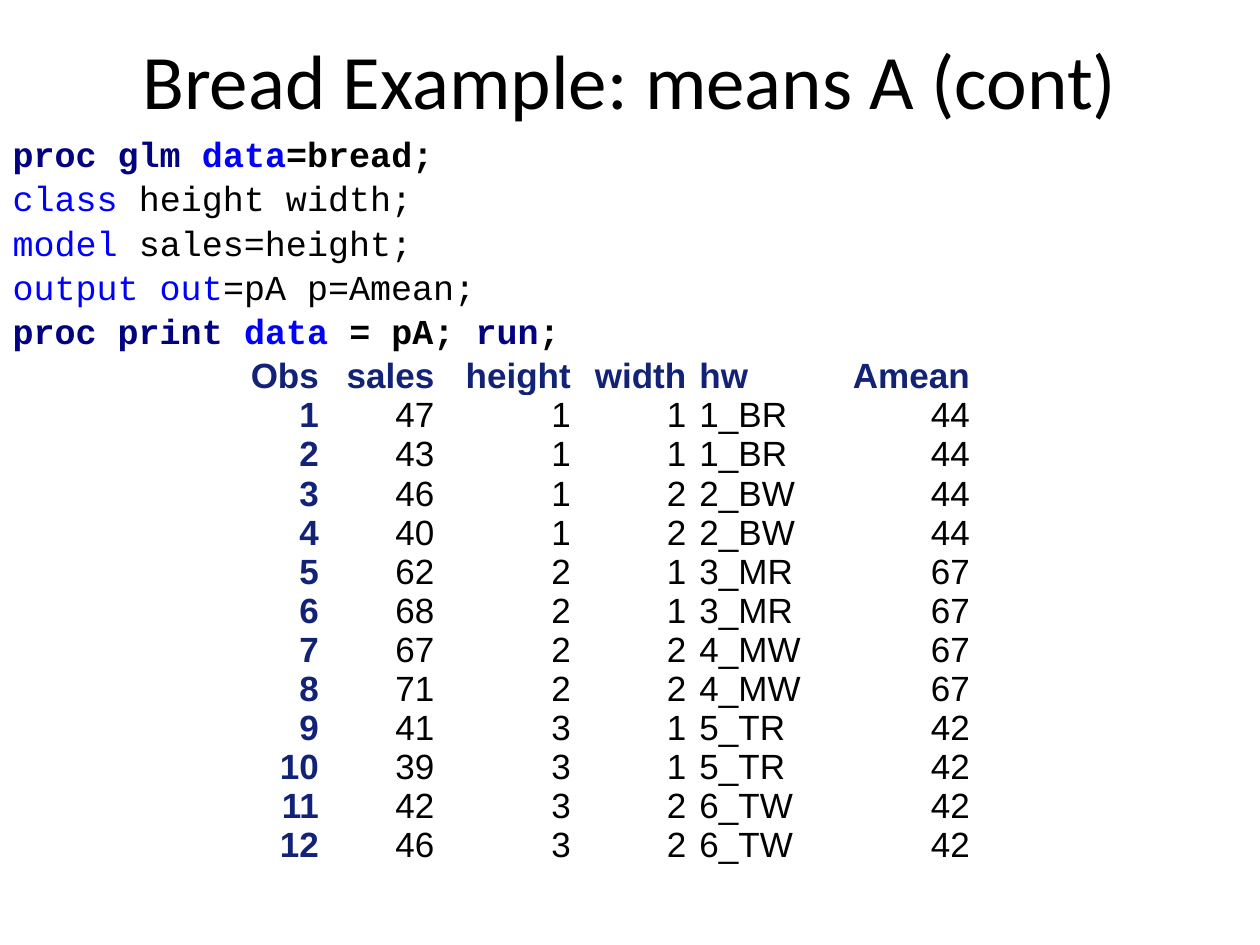
"""Build the bread example slide: code listing and table of predicted means."""
from pptx import Presentation
from pptx.dml.color import RGBColor
from pptx.enum.text import MSO_ANCHOR, MSO_AUTO_SIZE, PP_ALIGN
from pptx.oxml.xmlchemy import OxmlElement
from pptx.util import Pt

BLACK, NAVY, BLUE, HEADING = "000000", "000080", "0000FF", "112277"


def write(paragraph, text, font="Arial", size=20, color=BLACK, bold=False):
    run = paragraph.add_run()
    run.text = text
    run.font.name = font
    run.font.size = Pt(size)
    run.font.bold = bold
    run.font.color.rgb = RGBColor.from_string(color)


def place(shape, left, top, width, height):
    shape.left, shape.top = Pt(left), Pt(top)
    shape.width, shape.height = Pt(width), Pt(height)


deck = Presentation()
deck.slide_width, deck.slide_height = Pt(720), Pt(540)
slide = deck.slides.add_slide(deck.slide_layouts[1])

title = slide.shapes.title
place(title, 0, 0, 720, 90)
title.text_frame.vertical_anchor = MSO_ANCHOR.MIDDLE
heading = title.text_frame.paragraphs[0]
heading.alignment = PP_ALIGN.CENTER
write(heading, "Bread Example: means A (cont)", font="Calibri", size=44)

code_lines = [
    (True, [("proc glm ", NAVY), ("data", BLUE), ("=bread;", BLACK)]),
    (False, [("class", BLUE), (" height width;", BLACK)]),
    (False, [("model", BLUE), (" sales=height;", BLACK)]),
    (False, [("output out", BLUE), ("=pA p=Amean;", BLACK)]),
    (True, [("proc print ", NAVY), ("data", BLUE), (" = pA; ", BLACK),
            ("run", NAVY), (";", BLACK)]),
]
code = slide.placeholders[1]
place(code, 0, 72, 720, 144)
code.text_frame.auto_size = MSO_AUTO_SIZE.NONE
for number, (bold, pieces) in enumerate(code_lines):
    line = code.text_frame.paragraphs[0] if number == 0 else code.text_frame.add_paragraph()
    line.space_before = Pt(1.33)
    properties = line._p.get_or_add_pPr()
    properties.set("marL", str(Pt(27)))
    properties.set("indent", str(Pt(-27)))
    properties.append(OxmlElement("a:buNone"))
    for text, color in pieces:
        write(line, text, font="Courier New", color=color, bold=bold)

columns = ["Obs", "sales", "height", "width", "hw", "Amean"]
column_widths = [48, 66, 78, 66, 78, 84]
sales = [47, 43, 46, 40, 62, 68, 67, 71, 41, 39, 42, 46]
groups = ["1_BR", "2_BW", "3_MR", "4_MW", "5_TR", "6_TW"]
height_means = [44, 67, 42]
rows = [columns]
for index, sold in enumerate(sales):
    height, width = index // 4, index // 2 % 2
    rows.append([index + 1, sold, height + 1, width + 1,
                 groups[index // 2], height_means[height]])

means = slide.shapes.add_table(len(rows), len(columns), Pt(138), Pt(204), Pt(420), Pt(0)).table
means.horz_banding = False
for column, column_width in zip(means.columns, column_widths):
    column.width = Pt(column_width)
for row_number, row in enumerate(rows):
    for column_number, value in enumerate(row):
        cell = means.cell(row_number, column_number)
        cell.fill.background()
        cell.vertical_anchor = MSO_ANCHOR.MIDDLE
        cell.margin_left = cell.margin_right = Pt(3.75)
        cell.margin_top = cell.margin_bottom = Pt(0)
        entry = cell.text_frame.paragraphs[0]
        entry.alignment = PP_ALIGN.LEFT if columns[column_number] == "hw" else PP_ALIGN.RIGHT
        entry.space_before = entry.space_after = Pt(5)
        label = row_number == 0 or column_number == 0
        write(entry, str(value), color=HEADING if label else BLACK, bold=label)

deck.save("out.pptx")
